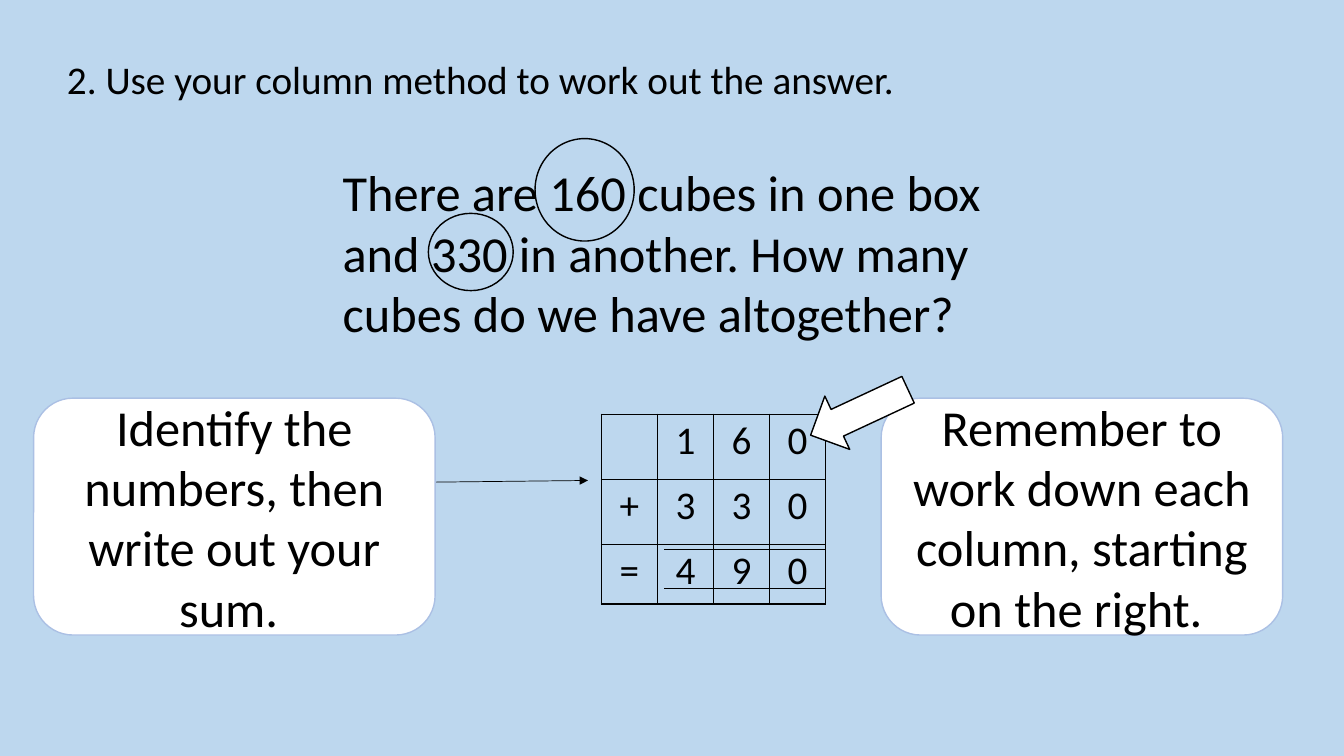
from lxml.etree import SubElement
from pptx import Presentation
from pptx.dml.color import RGBColor
from pptx.enum.shapes import MSO_CONNECTOR as LINK, MSO_SHAPE as FORM
from pptx.enum.text import MSO_ANCHOR, MSO_AUTO_SIZE, PP_ALIGN
from pptx.oxml.ns import qn
from pptx.util import Inches, Pt

THEME = {
    "sky": RGBColor.from_string("BDD7EE"),
    "ink": RGBColor.from_string("000000"),
    "card": RGBColor.from_string("FFFFFF"),
    "edge": RGBColor.from_string("ABC0E4"),
    "font": "Calibri",
    "small": Pt(28),
    "large": Pt(36),
    "thin": Pt(0.5),
    "line": Pt(1),
}

# Slide of 160 by 90 grid units
deck = Presentation()
deck.slide_width, deck.slide_height = Inches(13.333), Inches(7.5)
unit = deck.slide_height / 90
slide = deck.slides.add_slide(deck.slide_layouts[6])
slide.background.fill.solid()
slide.background.fill.fore_color.rgb = THEME["sky"]
shapes = slide.shapes


def grid(*cells):
    return [round(cell * unit) for cell in cells]


def write(frame, text, size, frame_fmt, para_fmt):
    frame.text = text
    para = frame.paragraphs[0]
    font = para.runs[0].font
    font.color.rgb = THEME["ink"]
    font_fmt = {"name": THEME["font"], "size": THEME[size]}
    for part, fmt in ((frame, frame_fmt), (para, para_fmt), (font, font_fmt)):
        for key, value in fmt.items():
            setattr(part, key, value)


# Heading and word problem
flow = {"word_wrap": True, "auto_size": MSO_AUTO_SIZE.SHAPE_TO_FIT_TEXT}
for box, size, text in (
    ((6.8, 6, 103.4, 6.8), "small",
     "2. Use your column method to work out the answer."),
    ((39.6, 18.6, 86.8, 23), "large",
     "There are 160 cubes in one box and 330 in another. "
     "How many cubes do we have altogether?"),
):
    write(shapes.add_textbox(*grid(*box)).text_frame, text, size, flow, {})

# Column sum
sums = (" 160", "+330", "=490")
highs = (7.74, 7.74, 7.14)
wide = 6.67
table = shapes.add_table(
    3, 4, *grid(71.6, 49.3, 4 * wide, sum(highs))).table
table.first_row = table.horz_banding = False
for col in table.columns:
    col.width = grid(wide)[0]
inset = {"margin_left": Inches(0.07), "margin_right": Inches(0.07),
         "margin_top": 0, "margin_bottom": 0}
mid = {"alignment": PP_ALIGN.CENTER, "line_spacing": 1.07}
for r, (high, digits) in enumerate(zip(highs, sums)):
    table.rows[r].height = grid(high)[0]
    for c, digit in enumerate(digits):
        cell = table.cell(r, c)
        if digit.strip():
            write(cell.text_frame, digit, "small", {}, mid)
        for key, value in inset.items():
            setattr(cell, key, value)
        props = cell._tc.get_or_add_tcPr()
        for side in ("a:lnL", "a:lnR", "a:lnT", "a:lnB"):
            edge = SubElement(props, qn(side), w=str(THEME["line"]))
            paint = SubElement(edge, qn("a:solidFill"))
            SubElement(paint, qn("a:srgbClr"), val=str(THEME["ink"]))
        cell.fill.background()

# Pointer to the sum and rules around its answer
for ends, head in (
    ((51.7, 57.4, 70, 57.2), True),
    ((79.1, 65.4, 98.3, 65.4), False),
    ((79.1, 70.1, 98.3, 70.1), False),
):
    link = shapes.add_connector(LINK.STRAIGHT, *grid(*ends))
    link.line.color.rgb = THEME["ink"]
    link.line.width = THEME["thin"]
    if head:
        SubElement(link.line._get_or_add_ln(), qn("a:tailEnd"),
                   type="triangle")
    SubElement(link._element.spPr, qn("a:effectLst"))

# Number rings, hint cards and block arrow
cards = {"word_wrap": True, "vertical_anchor": MSO_ANCHOR.MIDDLE}
for form, box, fill, edge, turn, text in (
    (FORM.OVAL, (63.7, 16.5, 11.8, 12.2), None, "ink", 0, ""),
    (FORM.OVAL, (51, 25.4, 10.1, 9.2), None, "ink", 0, ""),
    (FORM.ROUNDED_RECTANGLE, (4, 47.4, 47.8, 28.2), "card", "edge", 0,
     "Identify the numbers, then write out your sum. "),
    (FORM.ROUNDED_RECTANGLE, (104.9, 47.4, 47.8, 28.2), "card", "edge", 0,
     "Remember to work down each column, starting on the right. "),
    (FORM.RIGHT_ARROW, (95.9, 45.6, 12.8, 7), "card", "ink", 155, ""),
):
    item = shapes.add_shape(form, *grid(*box))
    item.shadow.inherit = False
    item.rotation = turn
    item.line.color.rgb = THEME[edge]
    item.line.width = THEME["line"]
    if fill:
        item.fill.solid()
        item.fill.fore_color.rgb = THEME[fill]
    else:
        item.fill.background()
    if text:
        write(item.text_frame, text, "large", cards,
              {"alignment": PP_ALIGN.CENTER})

deck.save("out.pptx")
